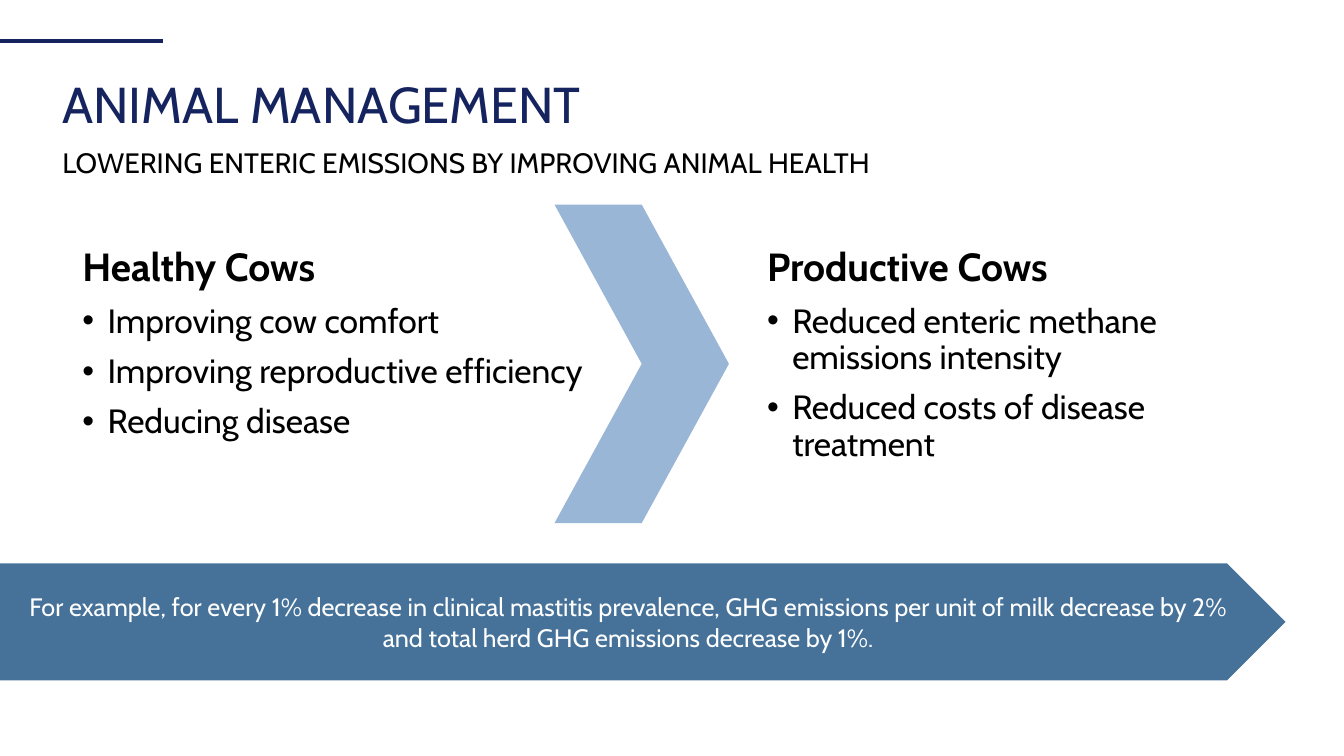
from lxml import etree
from pptx import Presentation
from pptx import util as u
from pptx.dml import color
from pptx.enum import shapes, text
from pptx.oxml import ns

PX = 9144
COLORS = {"navy": "15235F", "black": "000000", "white": "FFFFFF",
          "sky": "9AB6D6", "steel": "467299"}


def rgb(name):
    return color.RGBColor.from_string(COLORS[name])


def write(p, content, size=24, ink="black", bold=False, bullet=False,
          spacing=None, before=None, align=None):
    pPr = p._p.get_or_add_pPr()
    if bullet:
        pPr.set("marL", str(25 * PX))
        pPr.set("indent", str(-25 * PX))
        etree.SubElement(pPr, ns.qn("a:buFont")).set("typeface", "Arial")
        etree.SubElement(pPr, ns.qn("a:buChar")).set("char", "•")
    if spacing:
        p.line_spacing = spacing
    if before:
        p.space_before = u.Pt(before)
    if align:
        p.alignment = align
    r = p.add_run()
    r.text = content
    r.font.name = "Cabin"
    r.font.size = u.Pt(size)
    r.font.bold = bold
    r.font.color.rgb = rgb(ink)


class Deck:
    def __init__(self, width, height):
        self.prs = Presentation()
        self.prs.slide_width = u.Emu(width * PX)
        self.prs.slide_height = u.Emu(height * PX)
        self.s = self.prs.slides.add_slide(self.prs.slide_layouts[6])

    def px(self, *lengths):
        return [u.Emu(n * PX) for n in lengths]

    def rule(self, x1, y1, x2, y2, ink, weight):
        line = self.s.shapes.add_connector(
            shapes.MSO_CONNECTOR.STRAIGHT, *self.px(x1, y1, x2, y2))
        line.line.color.rgb = rgb(ink)
        line.line.width = u.Pt(weight)
        etree.SubElement(line._element.spPr, ns.qn("a:effectLst"))

    def box(self, x, y, w, h, anchor=text.MSO_ANCHOR.TOP):
        tf = self.s.shapes.add_textbox(*self.px(x, y, w, h)).text_frame
        tf.word_wrap = True
        tf.vertical_anchor = anchor
        return tf

    def shape(self, kind, x, y, w, h, fill):
        sp = self.s.shapes.add_shape(kind, *self.px(x, y, w, h))
        sp.shadow.inherit = False
        sp.fill.solid()
        sp.fill.fore_color.rgb = rgb(fill)
        sp.line.fill.background()
        return sp

    def column(self, x, y, w, h, heading, points):
        tf = self.box(x, y, w, h)
        write(tf.paragraphs[0], heading, size=28, bold=True, spacing=0.9)
        for point in points:
            write(tf.add_paragraph(), point, bullet=True, spacing=0.9, before=10)


def main():
    deck = Deck(1333, 750)
    deck.rule(0, 41, 162, 41, "navy", 3)

    title = deck.box(52, 73, 1223, 66, text.MSO_ANCHOR.MIDDLE)
    write(title.paragraphs[0], "ANIMAL MANAGEMENT", size=36, ink="navy", spacing=0.9)

    deck.column(751, 241, 463, 242, "Productive Cows", [
        "Reduced enteric methane emissions intensity",
        "Reduced costs of disease treatment"])
    deck.column(72, 241, 524, 228, "Healthy Cows", [
        "Improving cow comfort",
        "Improving reproductive efficiency",
        "Reducing disease"])
    deck.shape(shapes.MSO_SHAPE.CHEVRON, 550, 203, 173, 316, "sky")

    subtitle = deck.box(52, 139, 833, 44)
    write(subtitle.paragraphs[0],
          "LOWERING ENTERIC EMISSIONS BY IMPROVING ANIMAL HEALTH", size=20)

    banner = deck.shape(shapes.MSO_SHAPE.PENTAGON, 0, 559, 1275, 116, "steel")
    tf = banner.text_frame
    tf.word_wrap = True
    tf.vertical_anchor = text.MSO_ANCHOR.MIDDLE
    write(tf.paragraphs[0],
          "For example, for every 1% decrease in clinical mastitis prevalence, "
          "GHG emissions per unit of milk decrease by 2% and total herd GHG "
          "emissions decrease by 1%.",
          size=18, ink="white", align=text.PP_ALIGN.CENTER)

    deck.prs.save("out.pptx")


if __name__ == "__main__":
    main()
